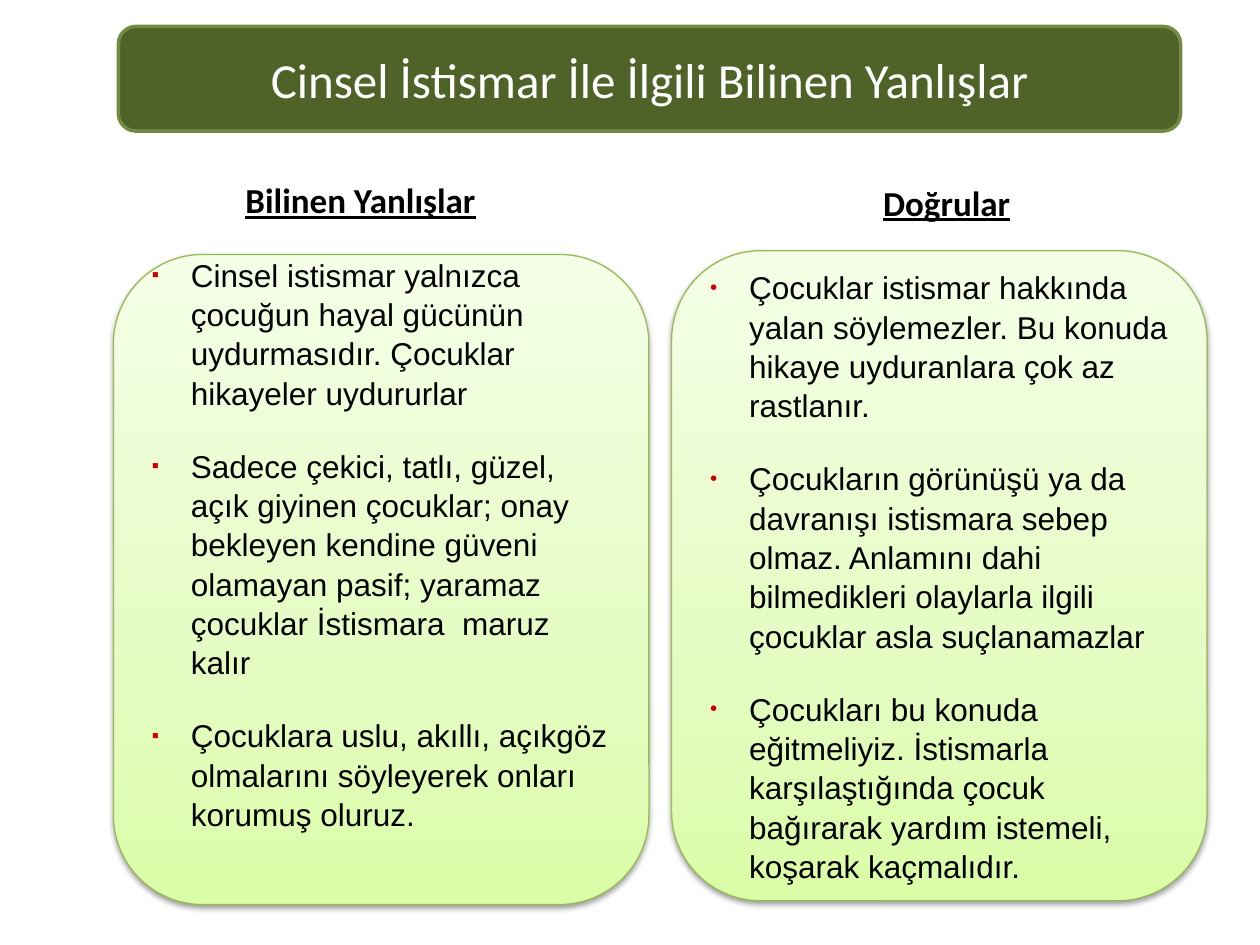
"""Build a slide that sets common myths beside the facts."""
import dataclasses

import lxml.etree
import pptx
import pptx.dml.color
import pptx.enum.shapes
import pptx.enum.text
import pptx.oxml.ns
import pptx.util

WIDTH, HEIGHT = 10, 7.5


@dataclasses.dataclass(frozen=True)
class Theme:
    """Colours, fonts and type sizes."""
    ink: str = "000000"
    light: str = "FFFFFF"
    banner: str = "4F6228"
    border: str = "738A42"
    edge: str = "98B955"
    bullet: str = "CC0000"
    fade: tuple = ((0, "DAFDA7"), (35, "E4FCC2"), (100, "F5FFE7"))
    display: str = "Calibri"
    body: str = "Arial"
    title: int = 28
    label: int = 20
    text: int = 18


THEME = Theme()

MYTHS = (
    "Cinsel istismar yalnızca çocuğun hayal gücünün uydurmasıdır. Çocuklar hikayeler uydururlar",
    "Sadece çekici, tatlı, güzel,  açık giyinen çocuklar; onay bekleyen kendine güveni "
    "olamayan pasif; yaramaz çocuklar İstismara  maruz kalır",
    "Çocuklara uslu, akıllı, açıkgöz olmalarını söyleyerek onları korumuş oluruz.",
)
FACTS = (
    "Çocuklar istismar hakkında yalan söylemezler. Bu konuda hikaye uyduranlara çok az rastlanır.",
    "Çocukların görünüşü ya da davranışı istismara sebep olmaz. Anlamını dahi bilmedikleri "
    "olaylarla ilgili çocuklar asla suçlanamazlar",
    "Çocukları bu konuda eğitmeliyiz. İstismarla karşılaştığında çocuk bağırarak yardım "
    "istemeli, koşarak kaçmalıdır.",
)


def place(left, top, width, height):
    """Turn percentages of the slide into lengths."""
    return [pptx.util.Inches(share * side / 100) for share, side in
            ((left, WIDTH), (top, HEIGHT), (width, WIDTH), (height, HEIGHT))]


def paint(value):
    """Return a colour from its hex value."""
    return pptx.dml.color.RGBColor.from_string(value)


def node(parent, tag, **traits):
    """Append a drawing element with the given attributes."""
    return lxml.etree.SubElement(
        parent, pptx.oxml.ns.qn("a:" + tag), {key: str(val) for key, val in traits.items()})


def write(para, text, face, size, tone, bold=None, under=None):
    """Add one styled run to a paragraph."""
    run = para.add_run()
    run.text = text
    font = run.font
    font.name, font.size = face, pptx.util.Pt(size)
    font.bold, font.underline = bold, under
    font.color.rgb = paint(tone)


def add_box(slide, area, edge, weight):
    """Add a rounded box with an outline and middle anchored text."""
    kind = pptx.enum.shapes.MSO_SHAPE.ROUNDED_RECTANGLE
    box = slide.shapes.add_shape(kind, *place(*area))
    box.shadow.inherit = False
    box.line.color.rgb = paint(edge)
    box.line.width = pptx.util.Pt(weight)
    box.text_frame.word_wrap = True
    box.text_frame.vertical_anchor = pptx.enum.text.MSO_ANCHOR.MIDDLE
    return box


def add_title(slide, text):
    """Add the banner with the slide title."""
    box = add_box(slide, (9.4, 2.8, 84.3, 11.07), THEME.border, 2)
    box.fill.solid()
    box.fill.fore_color.rgb = paint(THEME.banner)
    para = box.text_frame.paragraphs[0]
    para.alignment = pptx.enum.text.PP_ALIGN.CENTER
    write(para, text, THEME.display, THEME.title, THEME.light)


def add_fade(box):
    """Fill a box with the rising gradient."""
    box.fill.gradient()
    box.fill.gradient_angle = 90
    stops = box.element.spPr.find(".//" + pptx.oxml.ns.qn("a:gsLst"))
    for stop in list(stops):
        stops.remove(stop)
    for share, tone in THEME.fade:
        node(node(stops, "gs", pos=share * 1000), "srgbClr", val=tone)


def add_shade(box):
    """Give a box a soft shadow below it."""
    group = box.element.spPr.find(pptx.oxml.ns.qn("a:effectLst"))
    shade = node(group, "outerShdw", blurRad=pptx.util.Pt(3.1), dist=pptx.util.Pt(1.6),
                 dir=90 * 60000, rotWithShape=0)
    node(node(shade, "srgbClr", val=THEME.ink), "alpha", val=38000)


def add_point(para, text, mark):
    """Write one bulleted point."""
    para.alignment = pptx.enum.text.PP_ALIGN.LEFT
    para.line_spacing = 1.04
    para.space_before, para.space_after = pptx.util.Pt(5.2), pptx.util.Pt(14.2)
    props = para._p.get_or_add_pPr()
    indent = pptx.util.Inches(0.31)
    props.set("marL", str(indent))
    props.set("indent", str(-indent))
    node(node(props, "buClr"), "srgbClr", val=THEME.bullet)
    node(props, "buSzPct", val=65000)
    node(props, "buFont", typeface=THEME.body)
    node(props, "buChar", char=mark)
    write(para, text, THEME.body, THEME.text, THEME.ink)


def add_panel(slide, left, top, mark, points, foot=0.05):
    """Add a shaded panel of bulleted points."""
    box = add_box(slide, (left, top, 42.5, 68.8), THEME.edge, 0.75)
    add_fade(box)
    add_shade(box)
    frame = box.text_frame
    frame.margin_bottom = pptx.util.Inches(foot)
    for index, text in enumerate(points):
        para = frame.add_paragraph() if index else frame.paragraphs[0]
        add_point(para, text, mark)


def add_label(slide, area, text):
    """Add an underlined column heading."""
    frame = slide.shapes.add_textbox(*place(*area)).text_frame
    frame.word_wrap = False
    frame.auto_size = pptx.enum.text.MSO_AUTO_SIZE.SHAPE_TO_FIT_TEXT
    write(frame.paragraphs[0], text, THEME.display, THEME.label, THEME.ink, True, True)


def main():
    """Build and save the slide."""
    deck = pptx.Presentation()
    deck.slide_width = pptx.util.Inches(WIDTH)
    deck.slide_height = pptx.util.Inches(HEIGHT)
    slide = deck.slides.add_slide(deck.slide_layouts[6])
    add_title(slide, "Cinsel İstismar İle İlgili Bilinen Yanlışlar")
    add_panel(slide, 9, 26.93, "▪", MYTHS, foot=0.62)
    add_panel(slide, 53.3, 26.53, "•", FACTS)
    add_label(slide, (18.5, 18.27, 20.4, 5.87), "Bilinen Yanlışlar")
    add_label(slide, (69.1, 18.53, 12.2, 5.87), "Doğrular")
    deck.save("out.pptx")


if __name__ == "__main__":
    main()
